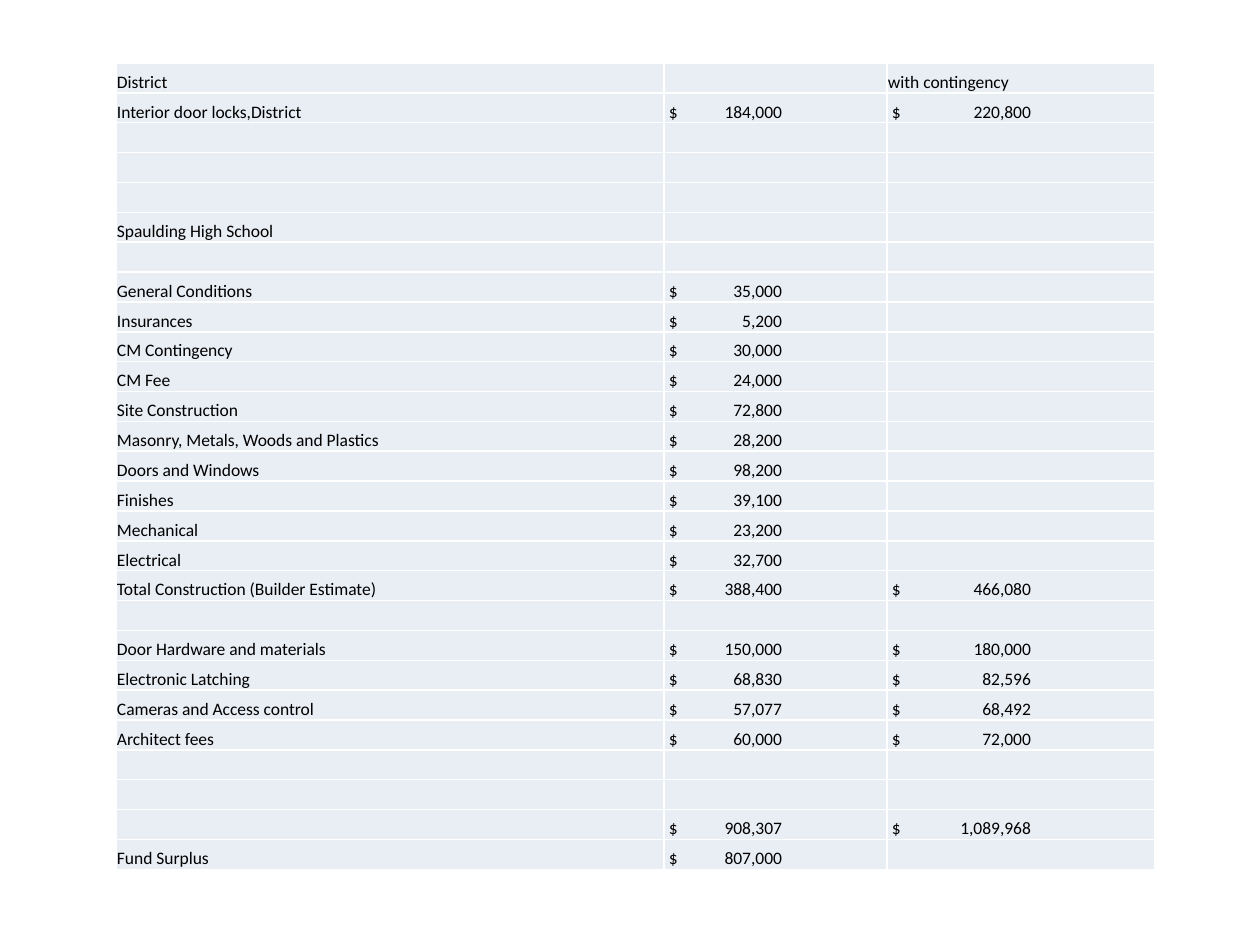
from lxml import etree
from pptx import Presentation, util as u
from pptx.dml.color import RGBColor
from pptx.enum import text
from pptx.oxml import ns

BLACK = RGBColor(0x00, 0x00, 0x00)
WHITE = RGBColor(0xFF, 0xFF, 0xFF)
PALE_BLUE = RGBColor(0xE9, 0xED, 0xF4)

EMU_PER_PX = 914400 / 126
BLANK = ("", "", "")

# Item, cost, cost with contingency
BUDGET = [
    ("District", "", "with contingency"),
    ("Interior door locks,District", 184000, 220800),
    BLANK, BLANK, BLANK,
    ("Spaulding High School", "", ""),
    BLANK,
    ("General Conditions", 35000, ""),
    ("Insurances", 5200, ""),
    ("CM Contingency", 30000, ""),
    ("CM Fee", 24000, ""),
    ("Site Construction", 72800, ""),
    ("Masonry, Metals, Woods and Plastics", 28200, ""),
    ("Doors and Windows", 98200, ""),
    ("Finishes", 39100, ""),
    ("Mechanical", 23200, ""),
    ("Electrical", 32700, ""),
    ("Total Construction (Builder Estimate)", 388400, 466080),
    BLANK,
    ("Door Hardware and materials", 150000, 180000),
    ("Electronic Latching", 68830, 82596),
    ("Cameras and Access control", 57077, 68492),
    ("Architect fees", 60000, 72000),
    BLANK, BLANK,
    ("", 908307, 1089968),
    ("Fund Surplus", 807000, ""),
]


def px(length):
    return u.Emu(round(length * EMU_PER_PX))


class BudgetSlide:
    font_format = {"name": "Calibri", "size": u.Pt(10)}
    cell_format = {
        "vertical_anchor": text.MSO_ANCHOR.BOTTOM,
        "margin_left": px(1), "margin_top": px(1),
        "margin_right": px(1), "margin_bottom": 0,
    }
    money_indent = px(5)

    def __init__(self, slide):
        self.slide = slide

    def add_table(self, rows, left, top, widths, height, tabs):
        shape = self.slide.shapes.add_table(
            len(rows), len(widths), px(left), px(top), px(sum(widths)), px(height))
        table = shape.table
        table.first_row = table.horz_banding = False
        for column, width in zip(table.columns, widths):
            column.width = px(width)
        for row, values in zip(table.rows, rows):
            row.height = px(height / len(rows))
            for cell, value, tab in zip(row.cells, values, tabs):
                self.fill_cell(cell, value, tab)

    def fill_cell(self, cell, value, tab):
        for name, setting in self.cell_format.items():
            setattr(cell, name, setting)
        self.add_borders(cell)
        cell.fill.solid()
        cell.fill.fore_color.rgb = PALE_BLUE
        paragraph = cell.text_frame.paragraphs[0]
        if value == "":
            # Small end mark keeps an empty row at its height
            end_mark = etree.SubElement(paragraph._p, ns.qn("a:endParaRPr"))
            end_mark.set("sz", str(round(self.font_format["size"].pt * 100)))
            return
        if isinstance(value, int):
            cell.margin_left = self.money_indent
            self.add_right_tab(paragraph, tab)
            value = f"$\t{value:,}"
        run = paragraph.add_run()
        run.text = value
        for name, setting in self.font_format.items():
            setattr(run.font, name, setting)
        run.font.color.rgb = BLACK

    def add_borders(self, cell):
        properties = cell._tc.get_or_add_tcPr()
        for side in "LRTB":
            line = etree.SubElement(properties, ns.qn(f"a:ln{side}"), w=str(u.Pt(1)))
            fill = etree.SubElement(line, ns.qn("a:solidFill"))
            etree.SubElement(fill, ns.qn("a:srgbClr"), val=str(WHITE))

    def add_right_tab(self, paragraph, position):
        tabs = etree.SubElement(paragraph._p.get_or_add_pPr(), ns.qn("a:tabLst"))
        etree.SubElement(tabs, ns.qn("a:tab"), pos=str(px(position)), algn="r")


def main():
    presentation = Presentation()
    presentation.slide_width = px(1260)
    presentation.slide_height = px(945)
    slide = presentation.slides.add_slide(presentation.slide_layouts[6])

    # Budget table, with amounts aligned on right tabs
    BudgetSlide(slide).add_table(
        BUDGET, left=116, top=63, widths=(548, 223, 268), height=807,
        tabs=(0, 113, 139))

    presentation.save("out.pptx")


if __name__ == "__main__":
    main()
